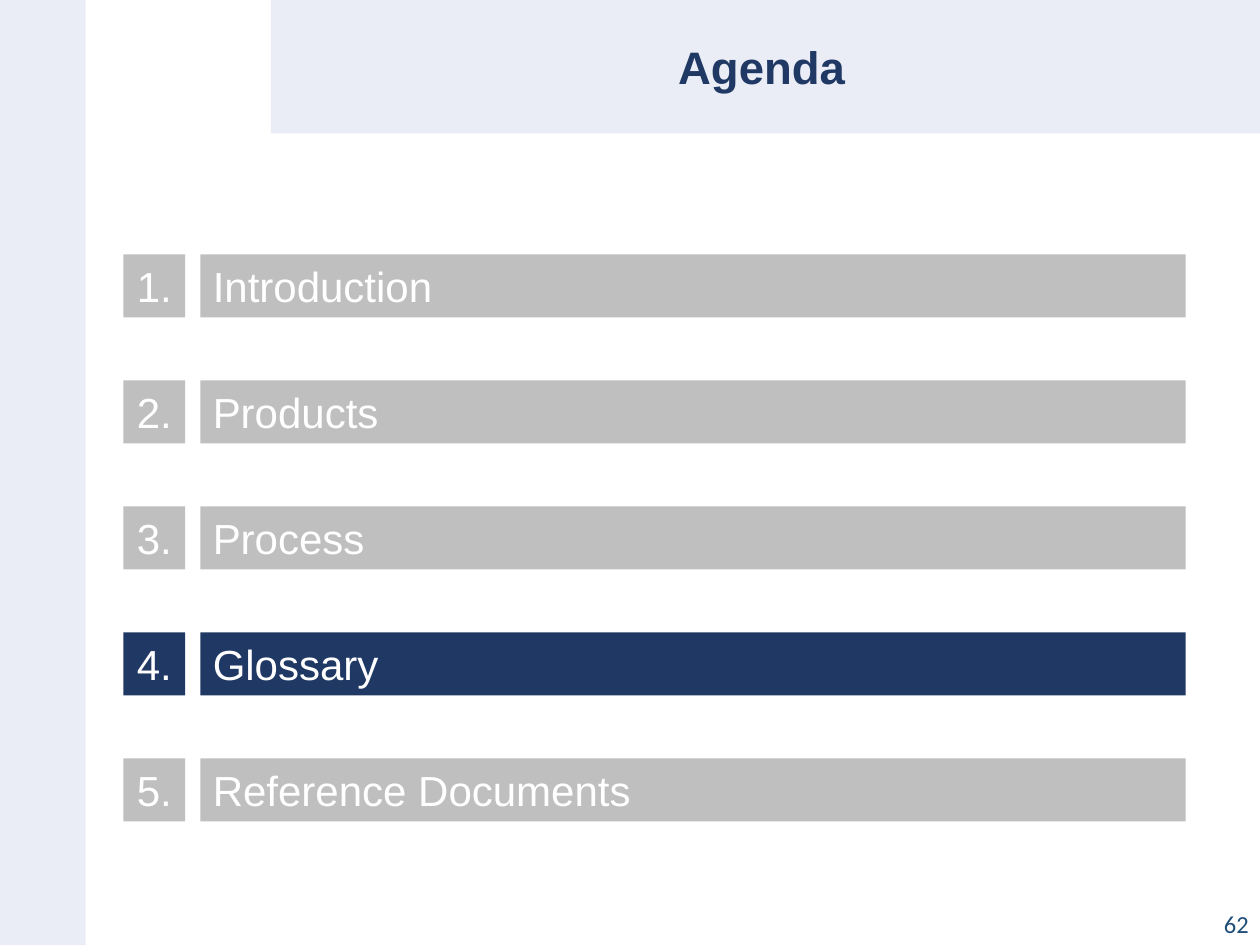
from pptx import Presentation
from pptx import util as u
from pptx.dml.color import RGBColor
from pptx.enum import shapes, text

PALE = RGBColor(0xEA, 0xED, 0xF6)
NAVY = RGBColor(0x20, 0x38, 0x64)
GREY = RGBColor(0xBF, 0xBF, 0xBF)
WHITE = RGBColor(0xFF, 0xFF, 0xFF)
BLUE = RGBColor(0x1F, 0x4E, 0x79)

TOPICS = ["Introduction", "Products", "Process", "Glossary", "Reference Documents"]
CURRENT = "Glossary"


def add_bar(parent, left, top, width, height, fill):
    bar = parent.add_shape(shapes.MSO_SHAPE.RECTANGLE, u.Inches(left), u.Inches(top),
                           u.Inches(width), u.Inches(height))
    bar.shadow.inherit = False
    bar.fill.solid()
    bar.fill.fore_color.rgb = fill
    bar.line.fill.background()
    return bar


def write(box, words, *, size, color, font="Arial", bold=False,
          align=text.PP_ALIGN.LEFT, anchor=text.MSO_ANCHOR.MIDDLE, spacing=1.0):
    frame = box.text_frame
    frame.word_wrap = True
    frame.auto_size = text.MSO_AUTO_SIZE.NONE
    frame.vertical_anchor = anchor
    para = frame.paragraphs[0]
    para.alignment = align
    para.line_spacing = spacing
    span = para.add_run()
    span.text = words
    span.font.name = font
    span.font.size = u.Pt(size)
    span.font.bold = bold
    span.font.color.rgb = color


deck = Presentation()
deck.slide_width, deck.slide_height = u.Inches(10), u.Inches(7.5)
page = deck.slides.add_slide(deck.slide_layouts[5])

# Side and header bands, with the title in front of them
add_bar(page.shapes, 0, 0, 0.68, 7.5, PALE)
header = add_bar(page.shapes, 2.15, 0, 7.85, 1.06, PALE)
title = page.shapes.title
header.element.addnext(title.element)
title.left, title.top = u.Inches(2.09), u.Inches(0.02)
title.width, title.height = u.Inches(7.91), u.Inches(1.06)
write(title, "Agenda", size=26, color=NAVY, bold=True,
      align=text.PP_ALIGN.CENTER, spacing=0.9)

# Agenda rows, one inch apart, with the current topic highlighted
for number, topic in enumerate(TOPICS, start=1):
    top = 1.02 + number
    fill = NAVY if topic == CURRENT else GREY
    row = page.shapes.add_group_shape()
    topic_bar = add_bar(row.shapes, 1.59, top, 7.82, 0.5, fill)
    write(topic_bar, topic, size=24, color=WHITE)
    number_bar = add_bar(row.shapes, 0.98, top, 0.49, 0.5, fill)
    write(number_bar, f"{number}.", size=24, color=WHITE, align=text.PP_ALIGN.CENTER)

page_number = page.shapes.add_textbox(u.Inches(7.76), u.Inches(7.1),
                                      u.Inches(2.25), u.Inches(0.4))
write(page_number, "62", size=14, color=BLUE, font="Calibri",
      align=text.PP_ALIGN.RIGHT, anchor=text.MSO_ANCHOR.BOTTOM)

deck.save("out.pptx")
